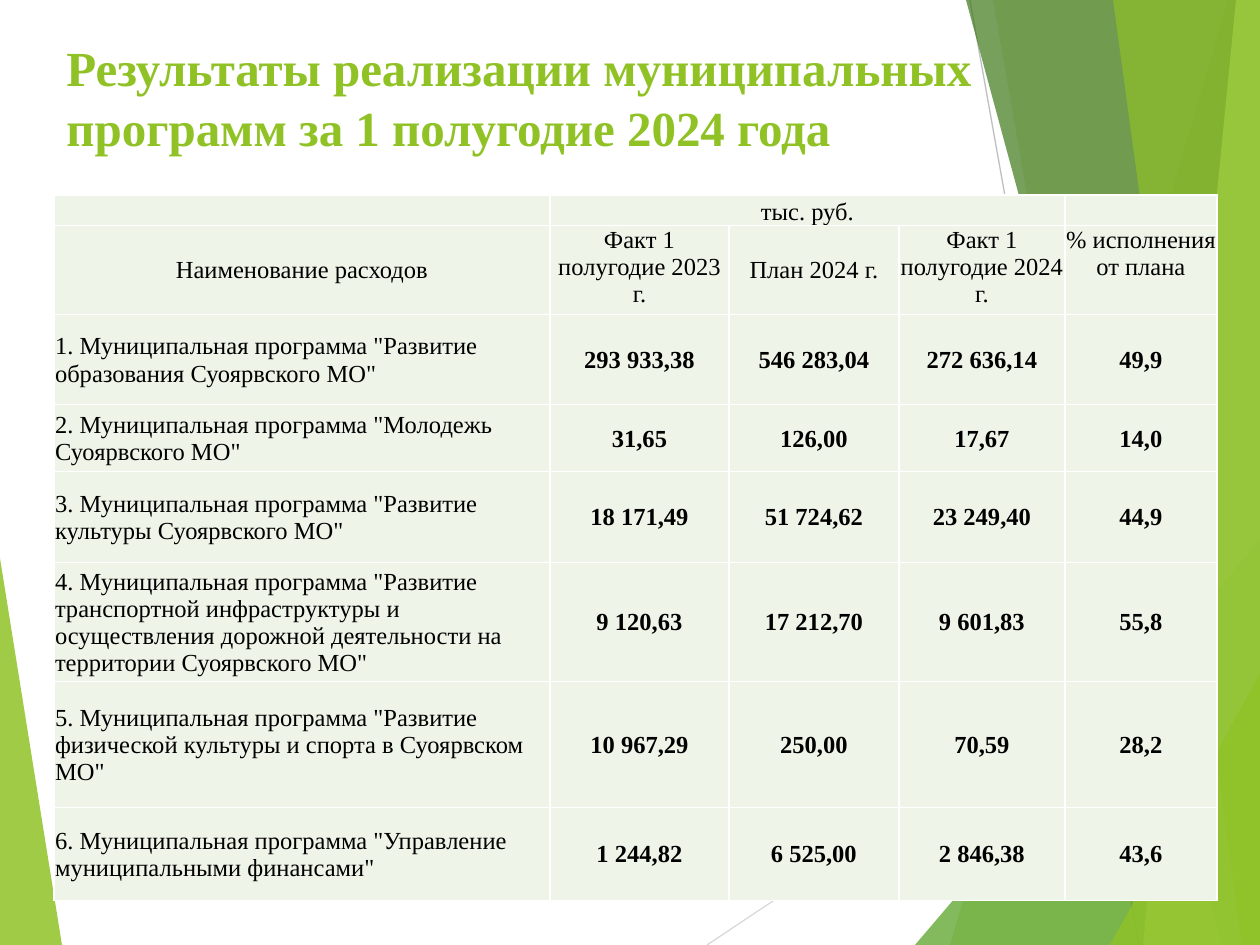
from dataclasses import dataclass

from lxml.etree import SubElement
from pptx import Presentation
from pptx.dml.color import RGBColor
from pptx.enum.shapes import MSO_CONNECTOR
from pptx.enum.text import MSO_ANCHOR as Anchor, PP_ALIGN as Align
from pptx.oxml.ns import qn
from pptx.util import Pt

EMU_PER_PX = 914400 / 126
WIDTH, HEIGHT = 1260, 945


def px(length):
    return round(length * EMU_PER_PX)


@dataclass(frozen=True)
class Theme:
    font: str = "Times New Roman"
    title_size: int = 28
    title_pitch: int = 34
    table_size: int = 14
    lime: str = "90C226"
    green: str = "54A021"
    forest: str = "3F7819"
    pale_lime: str = "C0E474"
    light_grey: str = "D9D9D9"
    grey: str = "BFBFBF"
    cell: str = "EEF4E8"
    border: str = "FFFFFF"
    ink: str = "000000"


class SlideBuilder:
    def __init__(self, slide, theme):
        self.shapes = slide.shapes
        self.theme = theme

    def facet(self, points, color, opacity):
        outline = self.shapes.build_freeform(*points[0], scale=EMU_PER_PX)
        outline.add_line_segments(points[1:], close=True)
        facet = outline.convert_to_shape()
        facet.shadow.inherit = False
        facet.line.fill.background()
        facet.fill.solid()
        facet.fill.fore_color.rgb = RGBColor.from_string(color)
        tint = facet._element.spPr.find(qn("a:solidFill"))[0]
        SubElement(tint, qn("a:alpha"), val=str(opacity * 1000))

    def ray(self, start, end, color):
        ray = self.shapes.add_connector(
            MSO_CONNECTOR.STRAIGHT, *map(px, start + end))
        ray.line.color.rgb = RGBColor.from_string(color)
        ray.line.width = Pt(0.75)
        SubElement(ray._element.spPr, qn("a:effectLst"))

    def set_text(self, paragraph, text, size, color, bold, align):
        paragraph.text = text
        paragraph.alignment = align
        font = paragraph.font
        font.name = self.theme.font
        font.size = Pt(size)
        font.bold = bold
        font.color.rgb = RGBColor.from_string(color)

    def title(self, text, left, top, width, height):
        frame = self.shapes.add_textbox(
            *map(px, (left, top, width, height))).text_frame
        frame.word_wrap = True
        frame.margin_top = px(8)
        heading = frame.paragraphs[0]
        self.set_text(heading, text, self.theme.title_size, self.theme.lime,
                      True, Align.LEFT)
        heading.line_spacing = Pt(self.theme.title_pitch)

    def style_cell(self, cell, text, bold, align, anchor):
        properties = cell._tc.get_or_add_tcPr()
        for side in ("lnL", "lnR", "lnT", "lnB"):
            edge = SubElement(properties, qn(f"a:{side}"), w=str(Pt(1)))
            paint = SubElement(edge, qn("a:solidFill"))
            SubElement(paint, qn("a:srgbClr"), val=self.theme.border)
        cell.fill.solid()
        cell.fill.fore_color.rgb = RGBColor.from_string(self.theme.cell)
        cell.margin_left = cell.margin_right = cell.margin_top = px(1)
        cell.margin_bottom = 0
        cell.vertical_anchor = anchor
        self.set_text(cell.text_frame.paragraphs[0], text,
                      self.theme.table_size, self.theme.ink, bold, align)

    def table(self, left, top, widths, heights, rows):
        table = self.shapes.add_table(
            len(heights), len(widths), px(left), px(top),
            px(sum(widths)), px(sum(heights))).table
        table.first_row = table.horz_banding = False
        for column, width in zip(table.columns, widths):
            column.width = px(width)
        for row, height in zip(table.rows, heights):
            row.height = px(height)
        for r, row in enumerate(rows):
            for c, text in enumerate(row):
                is_body = r > 1
                align = Align.LEFT if is_body and c == 0 else Align.CENTER
                if r == 0:
                    anchor = Anchor.BOTTOM
                elif r == 1 and c in (1, 3, 4):
                    anchor = Anchor.TOP
                else:
                    anchor = Anchor.MIDDLE
                self.style_cell(table.cell(r, c), text, is_body and c > 0,
                                align, anchor)
        table.cell(0, 1).merge(table.cell(0, 3))


PROGRAMS = [
    ('1. Муниципальная программа "Развитие образования Суоярвского МО"',
     "293 933,38", "546 283,04", "272 636,14", "49,9"),
    ('2. Муниципальная программа "Молодежь Суоярвского МО"',
     "31,65", "126,00", "17,67", "14,0"),
    ('3. Муниципальная программа "Развитие культуры Суоярвского МО"',
     "18 171,49", "51 724,62", "23 249,40", "44,9"),
    ('4. Муниципальная программа "Развитие транспортной инфраструктуры и '
     'осуществления дорожной деятельности на территории Суоярвского МО"',
     "9 120,63", "17 212,70", "9 601,83", "55,8"),
    ('5. Муниципальная программа "Развитие физической культуры и спорта '
     'в Суоярвском МО"',
     "10 967,29", "250,00", "70,59", "28,2"),
    ('6. Муниципальная программа "Управление муниципальными финансами"',
     "1 244,82", "6 525,00", "2 846,38", "43,6"),
]
HEADER = [
    ("", "тыс. руб.", "", "", ""),
    ("Наименование расходов", "Факт 1 полугодие 2023 г.", "План 2024 г.",
     "Факт 1 полугодие 2024 г.", "% исполнения от плана"),
]


def main():
    presentation = Presentation()
    presentation.slide_width = px(WIDTH)
    presentation.slide_height = px(HEIGHT)
    theme = Theme()
    slide = presentation.slides.add_slide(presentation.slide_layouts[6])
    builder = SlideBuilder(slide, theme)

    builder.facet([(0, 558), (62, HEIGHT), (0, HEIGHT)], theme.lime, 85)
    builder.ray((707, HEIGHT), (WIDTH, 576), theme.light_grey)
    builder.ray((970, 0), (1139, HEIGHT), theme.grey)

    right_facets = [
        (1228, 0, 950, theme.lime, 30),
        (993, 0, 1158, theme.lime, 20),
        (915, 540, None, theme.green, 72),
        (966, 0, 1222, theme.forest, 70),
        (1236, 0, 1143, theme.pale_lime, 70),
        (1113, 0, 1242, theme.lime, 65),
        (1110, 674, None, theme.lime, 80),
    ]
    for tip, top, foot, color, opacity in right_facets:
        if foot is None:
            points = [(tip, HEIGHT), (WIDTH, top), (WIDTH, HEIGHT)]
        else:
            points = [(tip, top), (foot, HEIGHT),
                      (WIDTH, HEIGHT), (WIDTH, top)]
        builder.facet(points, color, opacity)

    builder.title("Результаты реализации муниципальных\v"
                  "программ за 1 полугодие 2024 года", 54, 29, 1101, 181)
    builder.table(54, 195, (496, 179, 170, 166, 152),
                  (28, 82, 90, 67, 91, 109, 126, 93), HEADER + PROGRAMS)
    presentation.save("out.pptx")


if __name__ == "__main__":
    main()
